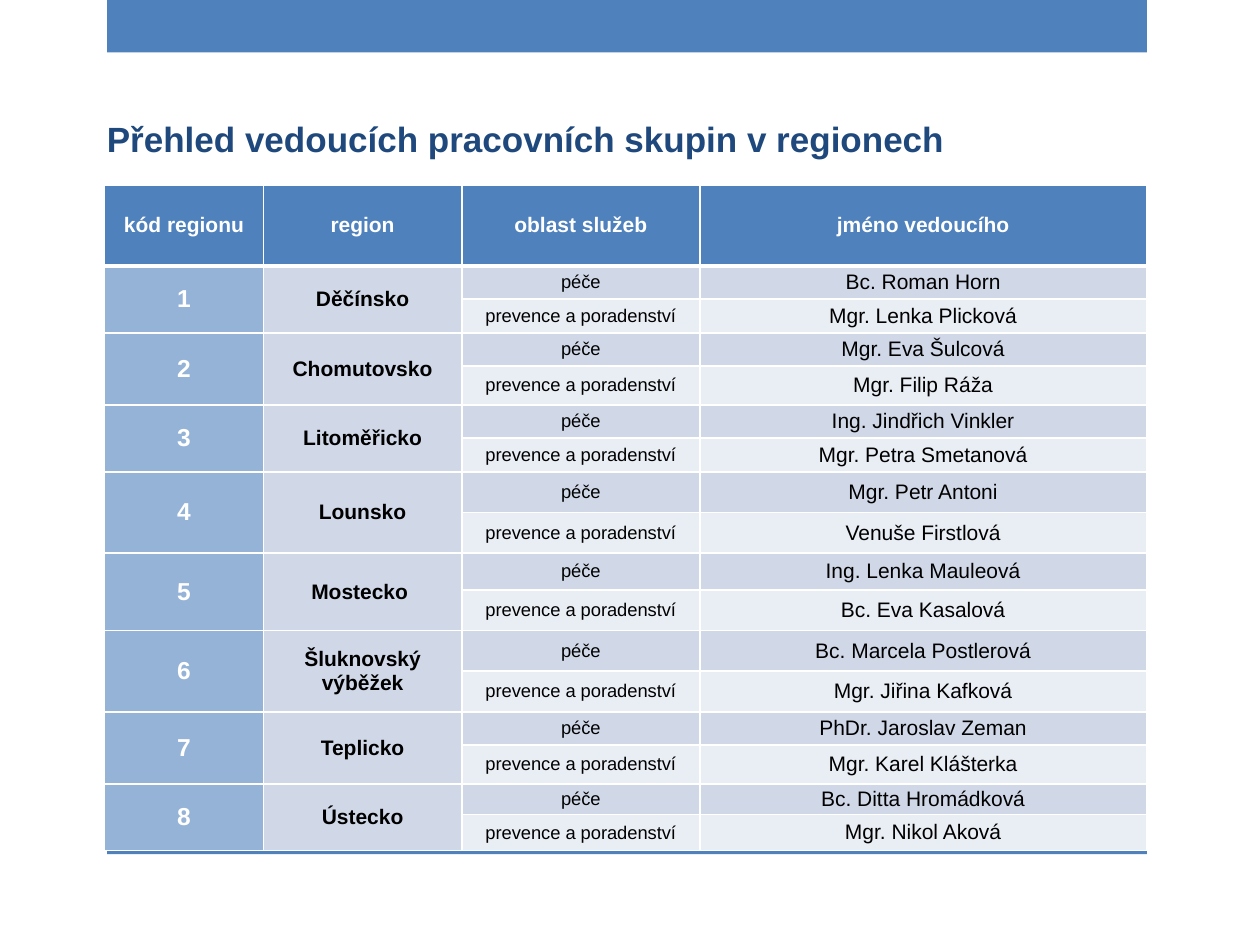
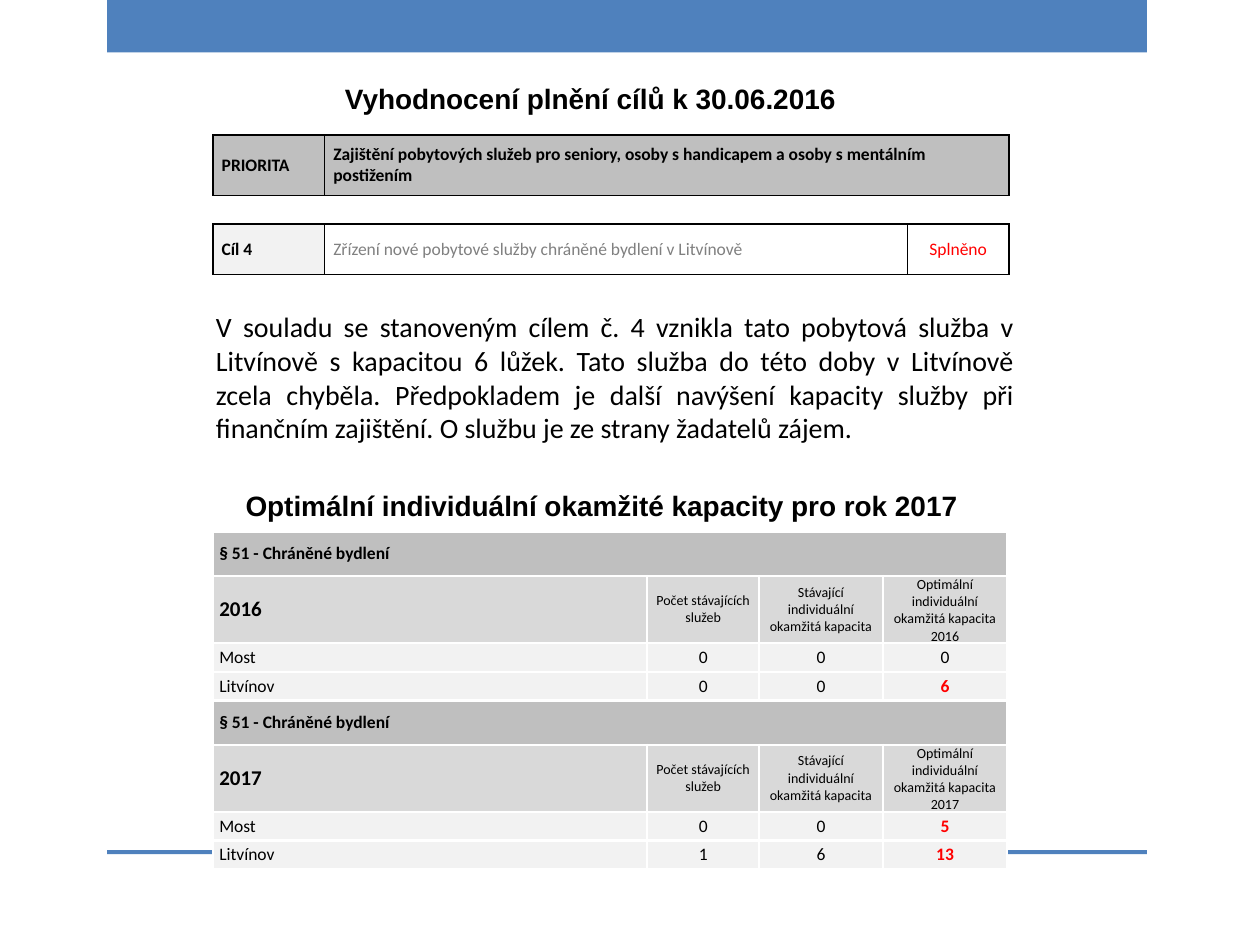
from dataclasses import dataclass
from typing import NamedTuple, Optional

from lxml.etree import SubElement
from pptx import Presentation
from pptx.dml.color import RGBColor
from pptx.enum.shapes import MSO_SHAPE as Preset
from pptx.enum.text import MSO_ANCHOR as Anchor, MSO_AUTO_SIZE as AutoSize, PP_ALIGN as Align
from pptx.oxml.ns import qn
from pptx.util import Cm, Pt

# Shared colours
BLUE, NAVY, SKY = "4F81BD", "1F497D", "95B3D7"
ICE, MIST = "D0D8E8", "E9EDF4"
BLACK, WHITE, RED, GRAY = "000000", "FFFFFF", "FF0000", "808080"
SILVER, LIGHT, PALE = "BFBFBF", "D9D9D9", "F2F2F2"


class Box(NamedTuple):
    left: float
    top: float
    width: float
    height: float

    def lengths(self) -> list:
        return [Cm(value) for value in self]


@dataclass
class Cell:
    text: str
    fill: Optional[str] = None
    size: float = 10
    color: str = BLACK
    bold: bool = False
    align: Align = Align.CENTER
    rows: int = 1
    cols: int = 1


@dataclass
class Grid:
    left: float
    top: float
    columns: list
    heights: list
    cells: list  # rows of Cell; None where a merged cell reaches
    font: str
    inset: float
    border: str
    border_width: float
    header_rule: Optional[float] = None


class Region(NamedTuple):
    name: str
    care_lead: str
    prevention_lead: str
    care_height: float
    prevention_height: float


BANDS = [Box(2.16, 0, 20.96, 1.06), Box(2.16, 17.14, 20.96, 0.08)]

REGIONS = [
    Region("Děčínsko", "Bc. Roman Horn", "Mgr. Lenka Plicková", 0.67, 0.68),
    Region("Chomutovsko", "Mgr. Eva Šulcová", "Mgr. Filip Ráža", 0.67, 0.78),
    Region("Litoměřicko", "Ing. Jindřich Vinkler", "Mgr. Petra Smetanová", 0.67, 0.68),
    Region("Lounsko", "Mgr. Petr Antoni", "Venuše Firstlová", 0.82, 0.82),
    Region("Mostecko ", "Ing. Lenka Mauleová", "Bc. Eva Kasalová", 0.74, 0.82),
    Region("Šluknovský výběžek", "Bc. Marcela Postlerová", "Mgr. Jiřina Kafková", 0.82, 0.82),
    Region("Teplicko", "PhDr. Jaroslav Zeman", "Mgr. Karel Klášterka", 0.67, 0.78),
    Region("Ústecko", "Bc. Ditta Hromádková", "Mgr. Nikol Aková", 0.62, 0.73),
]

# Per year: existing services, existing capacity, optimal capacity
CAPACITIES = {
    2016: {"Most": (0, 0, 0), "Litvínov": (0, 0, 6)},
    2017: {"Most": (0, 0, 5), "Litvínov": (1, 6, 13)},
}


def rgb(value: str) -> RGBColor:
    return RGBColor.from_string(value)


def write(frame, text: str, *, font: str = "Arial", size: float = 16, color: str = BLACK,
          bold: bool = False, align: Align = Align.LEFT) -> None:
    frame.word_wrap = True
    paragraph = frame.paragraphs[0]
    paragraph.alignment = align
    paragraph.space_before = Pt(0)
    run = paragraph.add_run()
    run.text = text
    run.font.name, run.font.size, run.font.bold = font, Pt(size), bold
    run.font.color.rgb = rgb(color)


def fill_placeholder(placeholder, box: Box, text: str, **text_format) -> None:
    placeholder.left, placeholder.top, placeholder.width, placeholder.height = box.lengths()
    frame = placeholder.text_frame
    frame.auto_size = AutoSize.NONE
    frame.vertical_anchor = Anchor.TOP
    write(frame, text, **text_format)


def remove_bullet(paragraph) -> None:
    properties = paragraph._p.get_or_add_pPr()
    properties.set("marL", "0")
    properties.set("indent", "0")
    SubElement(properties, qn("a:buNone"))


def add_master_bands(deck, slide) -> None:
    """Draw the bands and move them behind everything on the master."""
    master_tree = deck.slide_master.shapes.element
    for box in BANDS:
        band = slide.shapes.add_shape(Preset.RECTANGLE, *box.lengths())
        band.shadow.inherit = False
        band.fill.solid()
        band.fill.fore_color.rgb = rgb(BLUE)
        band.line.fill.background()
        master_tree.insert(2, band.element)


def set_borders(cell, color: str, widths: dict) -> None:
    properties = cell._tc.get_or_add_tcPr()
    for position, side in enumerate("LRTB"):
        line = SubElement(properties, qn(f"a:ln{side}"), w=str(Pt(widths[side])))
        solid = SubElement(line, qn("a:solidFill"))
        SubElement(solid, qn("a:srgbClr"), val=color)
        properties.insert(position, line)


def draw_grid(slide, grid: Grid) -> None:
    box = Box(grid.left, grid.top, sum(grid.columns), sum(grid.heights))
    table = slide.shapes.add_table(len(grid.heights), len(grid.columns), *box.lengths()).table
    table.first_row = table.horz_banding = False
    for column, width in zip(table.columns, grid.columns):
        column.width = Cm(width)
    for row, height in zip(table.rows, grid.heights):
        row.height = Cm(height)

    for r, row_cells in enumerate(grid.cells):
        for c, content in enumerate(row_cells):
            cell = table.cell(r, c)
            widths = dict.fromkeys("LRTB", grid.border_width)
            if grid.header_rule and r < 2:
                widths["B" if r == 0 else "T"] = grid.header_rule
            set_borders(cell, grid.border, widths)
            if content is None:
                continue
            if content.rows * content.cols > 1:
                cell.merge(table.cell(r + content.rows - 1, c + content.cols - 1))
            cell.vertical_anchor = Anchor.MIDDLE
            cell.margin_left = cell.margin_right = Cm(grid.inset)
            cell.margin_top = cell.margin_bottom = 0
            if content.fill:
                cell.fill.solid()
                cell.fill.fore_color.rgb = rgb(content.fill)
            else:
                cell.fill.background()
            write(cell.text_frame, content.text, font=grid.font, size=content.size,
                  color=content.color, bold=content.bold, align=content.align)


def leaders_grid() -> Grid:
    headings = ["kód regionu", "region", "oblast služeb", "jméno vedoucího"]
    cells = [[Cell(text, BLUE, 12, WHITE, True) for text in headings]]
    heights = [1.63]
    for code, region in enumerate(REGIONS, start=1):
        cells += [
            [Cell(str(code), SKY, 14, WHITE, True, rows=2),
             Cell(region.name, ICE, 12, bold=True, rows=2),
             Cell("péče", ICE, 10.5), Cell(region.care_lead, ICE, 12)],
            [None, None,
             Cell("prevence a poradenství", MIST, 10.5), Cell(region.prevention_lead, MIST, 12)],
        ]
        heights += [region.care_height, region.prevention_height]
    return Grid(2.11, 3.73, [3.2, 4, 4.8, 9], heights, cells, "Arial", 0.1, WHITE, 1, header_rule=3)


def capacity_grid() -> Grid:
    cells, heights = [], []
    for year, towns in CAPACITIES.items():
        headings = ["Počet stávajících služeb", "Stávající individuální okamžitá kapacita",
                    f"Optimální individuální okamžitá kapacita {year}"]
        cells.append([Cell("§ 51 - Chráněné bydlení", SILVER, bold=True, align=Align.LEFT, cols=4),
                      None, None, None])
        cells.append([Cell(str(year), LIGHT, 12, bold=True, align=Align.LEFT)]
                     + [Cell(text, LIGHT, 8) for text in headings])
        for town, (services, existing, optimal) in towns.items():
            goal = Cell(str(optimal), PALE)
            if optimal:
                goal.color, goal.bold = RED, True
            cells.append([Cell(town, PALE, align=Align.LEFT),
                          Cell(str(services), PALE), Cell(str(existing), PALE), goal])
        heights += [0.89, 1.35, 0.58, 0.58]
    return Grid(4.29, 10.72, [8.76, 2.25, 2.5, 2.5], heights, cells, "Calibri", 0.13, WHITE, 1.5)


def priority_grid() -> Grid:
    priority = ("Zajištění pobytových služeb pro seniory, osoby s handicapem "
                "a osoby s mentálním postižením")
    cells = [[Cell(text, SILVER, bold=True, align=Align.LEFT) for text in ("PRIORITA", priority)]]
    return Grid(4.29, 2.72, [2.25, 13.8], [1.22], cells, "Calibri", 0.18, BLACK, 1)


def goal_grid() -> Grid:
    cells = [[
        Cell("Cíl 4", PALE, bold=True, align=Align.LEFT),
        Cell("Zřízení nové pobytové služby chráněné bydlení v Litvínově",
             color=GRAY, align=Align.LEFT),
        Cell("Splněno", color=RED),
    ]]
    return Grid(4.29, 4.52, [2.25, 11.75, 2.05], [1.01], cells, "Calibri", 0.18, BLACK, 1)


def build_leaders(slide) -> None:
    fill_placeholder(slide.shapes.title, Box(1.9, 2.24, 21.2, 1.12),
                     "Přehled vedoucích pracovních skupin v regionech",
                     size=20, color=NAVY, bold=True)
    draw_grid(slide, leaders_grid())


def build_evaluation(slide) -> None:
    fill_placeholder(slide.shapes.title, Box(6.7, 1.52, 12.8, 0.94),
                     "Vyhodnocení plnění cílů k 30.06.2016", bold=True)
    draw_grid(slide, priority_grid())
    draw_grid(slide, goal_grid())

    # Evaluation of the goal
    evaluation = slide.placeholders[1]
    fill_placeholder(
        evaluation, Box(4.1, 6.12, 16.6, 3),
        "V souladu se stanoveným cílem č. 4 vznikla tato pobytová služba v Litvínově "
        "s kapacitou 6 lůžek. Tato služba do této doby v Litvínově zcela chyběla. "
        "Předpokladem je další navýšení kapacity služby při finančním zajištění. "
        "O službu je ze strany žadatelů zájem.",
        font="Calibri", align=Align.JUSTIFY)
    remove_bullet(evaluation.text_frame.paragraphs[0])

    # Capacities
    capacity_heading = slide.shapes.add_textbox(*Box(4.7, 9.73, 15.01, 0.94).lengths())
    write(capacity_heading.text_frame, "Optimální individuální okamžité kapacity pro rok 2017",
          bold=True)
    draw_grid(slide, capacity_grid())


def main() -> None:
    deck = Presentation()
    deck.slide_width, deck.slide_height = Cm(25.4), Cm(19.05)
    leaders = deck.slides.add_slide(deck.slide_layouts.get_by_name("Title Only"))
    evaluation = deck.slides.add_slide(deck.slide_layouts.get_by_name("Title and Content"))
    add_master_bands(deck, leaders)
    build_leaders(leaders)
    build_evaluation(evaluation)
    deck.save("out.pptx")


if __name__ == "__main__":
    main()
